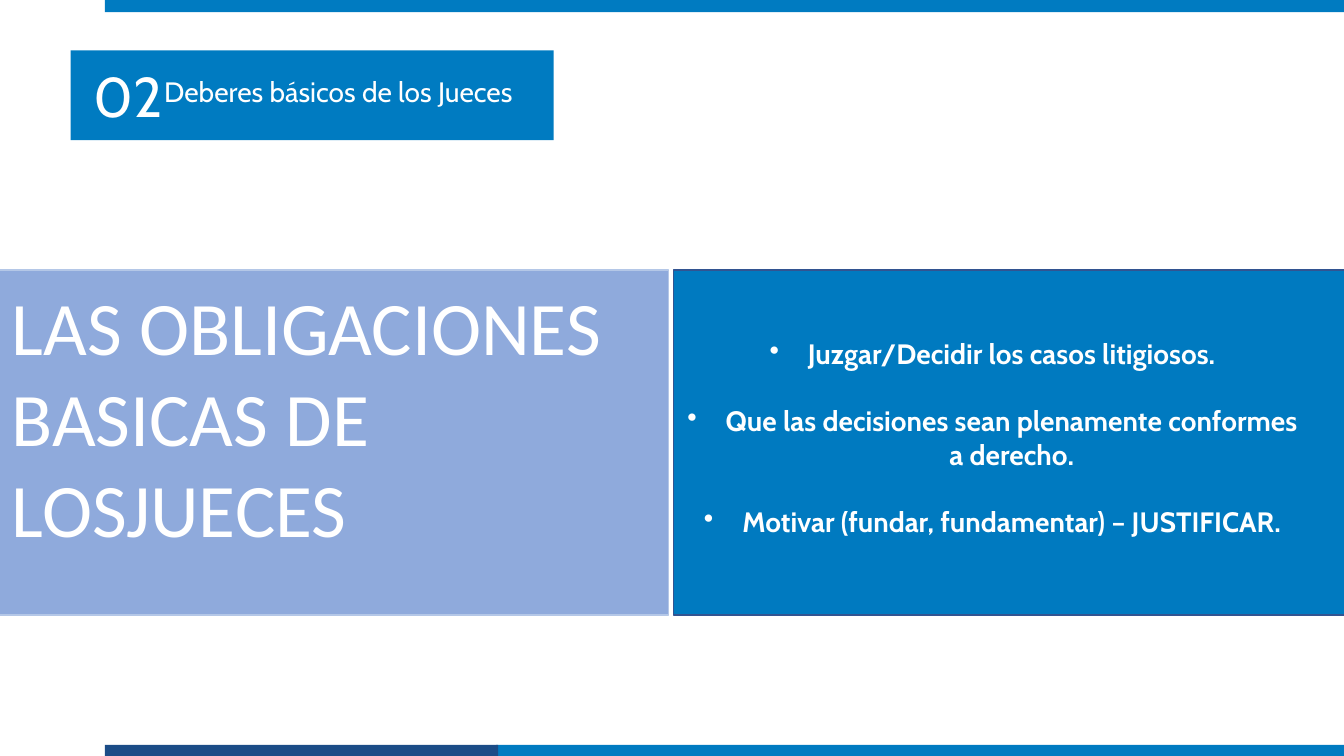
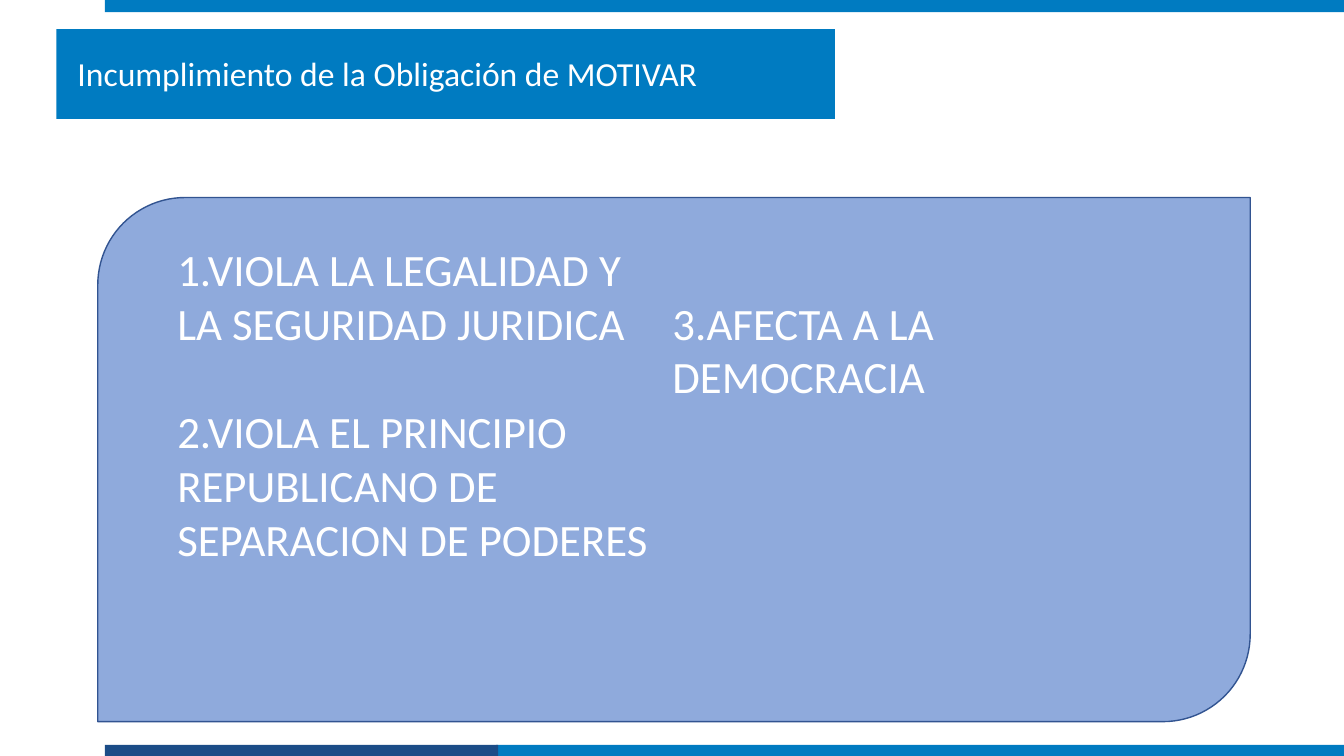
"""Build two slides on the basic duties of judges and the duty to justify."""
import pptx
import pptx.util
import pptx.dml.color
import pptx.enum.shapes
import pptx.enum.text
from lxml import etree

RGB = pptx.dml.color.RGBColor
SHAPE = pptx.enum.shapes.MSO_SHAPE
ALIGN = pptx.enum.text.PP_ALIGN
Inches = pptx.util.Inches
Pt = pptx.util.Pt

WHITE = RGB(0xFF, 0xFF, 0xFF)
BLUE = RGB(0x00, 0x7B, 0xC1)
PANEL_BLUE = RGB(0x00, 0x7A, 0xC0)
NAVY = RGB(0x1B, 0x4C, 0x87)
PERIWINKLE = RGB(0x8F, 0xAA, 0xDC)
PALE_EDGE = RGB(0xB4, 0xC7, 0xE7)
DARK_EDGE = RGB(0x32, 0x54, 0x91)

WIDTH, HEIGHT = 13.33, 7.5
BAND_LEFT, BAND_HEIGHT = 1.04, 0.12
BANDS = [
    (BAND_LEFT, 0, WIDTH - BAND_LEFT, BLUE),
    (4.92, HEIGHT - BAND_HEIGHT + 0.01, WIDTH - 4.92, BLUE),
    (BAND_LEFT, HEIGHT - BAND_HEIGHT + 0.01, 3.9, NAVY),
]
HEADING_HEIGHT = 0.89

SECTION_NUMBER = "02"
SECTION_TITLE = "Deberes básicos de los Jueces"
STATEMENT = "LAS OBLIGACIONES BASICAS DE LOSJUECES"
DUTIES = [
    "Juzgar/Decidir los casos litigiosos.",
    "Que las decisiones sean plenamente conformes a derecho.",
    "Motivar (fundar, fundamentar) – JUSTIFICAR.",
]
BREACH_TITLE = "Incumplimiento de la Obligación de MOTIVAR"
EFFECT_COLUMNS = [
    ["1.VIOLA LA LEGALIDAD Y LA SEGURIDAD JURIDICA",
     "2.VIOLA EL PRINCIPIO REPUBLICANO DE SEPARACION DE PODERES"],
    ["3.AFECTA A LA DEMOCRACIA"],
]


def add_block(slide, at, fill, edge=None, outline=SHAPE.RECTANGLE):
    block = slide.shapes.add_shape(outline, *map(Inches, at))
    block.shadow.inherit = False
    block.fill.solid()
    block.fill.fore_color.rgb = fill
    if edge is None:
        block.line.fill.background()
    else:
        block.line.color.rgb = edge
        block.line.width = Pt(1)


def add_bullet(paragraph, indent):
    properties = paragraph._p.get_or_add_pPr()
    properties.set("marL", str(Inches(indent)))
    properties.set("indent", str(-Inches(indent)))
    namespace = properties.nsmap["a"]
    etree.SubElement(properties, f"{{{namespace}}}buChar", char="•")


def add_text(slide, at, lines, size, font, bold=False, gap=0,
             align=ALIGN.LEFT, indent=None):
    frame = slide.shapes.add_textbox(*map(Inches, at)).text_frame
    frame.word_wrap = True
    frame.text = "\n".join(lines)
    for index, paragraph in enumerate(frame.paragraphs):
        paragraph.alignment = align
        paragraph.space_before = Pt(gap if index else 0)
        for run in paragraph.runs:
            run.font.size = Pt(size)
            run.font.name = font
            run.font.bold = bold
            run.font.color.rgb = WHITE
        if indent is not None:
            add_bullet(paragraph, indent)


def add_slide(deck, heading_left, heading_top, heading_width):
    slide = deck.slides.add_slide(deck.slide_layouts[6])
    for left, top, width, colour in BANDS:
        add_block(slide, (left, top, width, BAND_HEIGHT), colour)
    add_block(slide, (heading_left, heading_top, heading_width, HEADING_HEIGHT), BLUE)
    return slide


def build_duties(deck):
    slide = add_slide(deck, 0.7, 0.5, 4.79)
    add_text(slide, (0.83, 0.56, 1.41, 0.77), [SECTION_NUMBER], 40, "Cabin")
    add_text(slide, (1.53, 0.69, 4.28, 0.44), [SECTION_TITLE], 20, "Cabin")
    panel_top, panel_width, panel_height = 2.68, 6.67, 3.42
    duties_left = 6.68
    add_block(slide, (duties_left, panel_top, panel_width, panel_height),
              PANEL_BLUE, DARK_EDGE)
    add_block(slide, (-0.04, panel_top, panel_width, panel_height),
              PERIWINKLE, PALE_EDGE)
    add_text(slide, (0.02, 2.73, 6.43, 2.83), [STATEMENT], 54, "Calibri")
    add_text(slide, (duties_left, 3.29, 6.33, 2.46), DUTIES, 20, "Cabin",
             bold=True, gap=24, align=ALIGN.CENTER, indent=0.38)


def build_breach(deck):
    slide = add_slide(deck, 0.56, 0.29, 7.72)
    add_text(slide, (0.67, 0.48, 7.72, 0.5), [BREACH_TITLE], 24, "Calibri")
    add_block(slide, (0.97, 1.96, 11.43, 5.2), PERIWINKLE, DARK_EDGE,
              SHAPE.ROUND_2_DIAG_RECTANGLE)
    left, top, column_pitch, line_height = 1.66, 2.35, 4.91, 0.53
    for column, effects in enumerate(EFFECT_COLUMNS):
        at = (left + column * column_pitch, top + column * line_height,
              column_pitch + 0.2, 3.33 - column * line_height)
        add_text(slide, at, effects, 32, "Calibri", gap=39)


def main():
    deck = pptx.Presentation()
    deck.slide_width = Inches(WIDTH)
    deck.slide_height = Inches(HEIGHT)
    build_duties(deck)
    build_breach(deck)
    deck.save("out.pptx")


if __name__ == "__main__":
    main()
